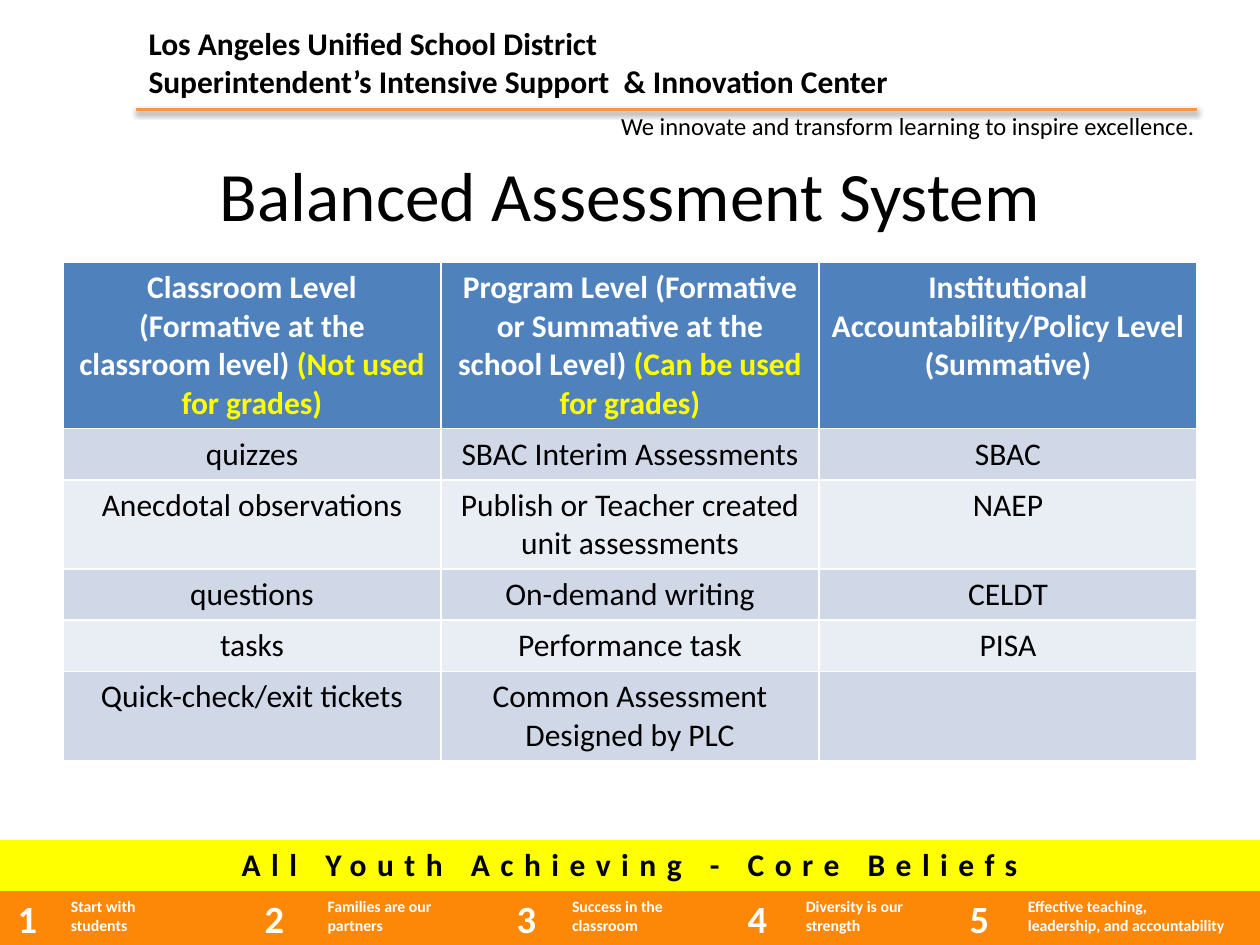
from lxml import etree
from pptx import Presentation
from pptx.dml.color import RGBColor
from pptx.enum import shapes, text
from pptx.oxml import ns
from pptx.util import Pt

FONT = "Calibri"
BLACK = RGBColor(0, 0, 0)
WHITE = RGBColor(255, 255, 255)
YELLOW = RGBColor(255, 255, 0)
ORANGE = RGBColor(0xFD, 0x88, 0x07)
RULE_ORANGE = RGBColor(0xF7, 0x96, 0x46)
BLUE = RGBColor(0x4F, 0x81, 0xBD)
BANDS = (RGBColor(0xD0, 0xD8, 0xE8), RGBColor(0xE9, 0xED, 0xF4))
PLAIN_STYLE = "{2D5ABB26-0587-4C30-8999-92F81FD0307C}"
LEFT, CENTER, RIGHT = (text.PP_ALIGN.LEFT, text.PP_ALIGN.CENTER,
                       text.PP_ALIGN.RIGHT)

HEADINGS = [
    ("Classroom Level (Formative at the classroom level) ",
     "(Not used for grades)"),
    ("Program Level (Formative or Summative at the school Level) ",
     "(Can be used for grades)"),
    ("Institutional Accountability/Policy Level (Summative)",),
]
ASSESSMENTS = [
    ("quizzes", "SBAC Interim Assessments", "SBAC"),
    ("Anecdotal observations",
     "Publish or Teacher created unit assessments", "NAEP"),
    ("questions", "On-demand writing", "CELDT"),
    ("tasks", "Performance task", "PISA"),
    ("Quick-check/exit tickets", "Common Assessment Designed by PLC", ""),
]
ASSESSMENT_HEIGHTS = (95, 29.2, 51, 29.2, 29.2, 51)
BELIEFS = [
    ("1 ", "Start with\nstudents"),
    ("2", "Families are our\npartners"),
    ("3", "Success in the\nclassroom"),
    ("4", "Diversity is our strength"),
    ("5", "Effective teaching,\nleadership, and accountability"),
]
BELIEF_WIDTHS = (33.3, 110.7, 36, 108, 31.7, 100.3, 33.3, 93.7, 33.3, 139.7)


def style_paragraph(para, size, color=BLACK, bold=False, align=LEFT):
    para.alignment = align
    font = para.font
    font.name, font.size, font.bold = FONT, Pt(size), bold
    font.color.rgb = color


def write(frame, words, size, **style):
    frame.text = words
    for para in frame.paragraphs:
        style_paragraph(para, size, **style)


def add_text(page, left, top, width, height, words, size, **style):
    box = page.shapes.add_textbox(Pt(left), Pt(top), Pt(width), Pt(height))
    box.text_frame.word_wrap = True
    write(box.text_frame, words, size, **style)
    return box


def add_rule(page, left, right, y):
    rule = page.shapes.add_connector(
        shapes.MSO_CONNECTOR.STRAIGHT, Pt(left), Pt(y), Pt(right), Pt(y))
    rule.line.color.rgb = RULE_ORANGE
    rule.line.width = Pt(2)
    effects = etree.SubElement(rule._element.spPr, ns.qn("a:effectLst"))
    shadow = etree.SubElement(
        effects, ns.qn("a:outerShdw"), blurRad=str(Pt(3.1)),
        dist=str(Pt(1.6)), dir="5400000", rotWithShape="0")
    tint = etree.SubElement(shadow, ns.qn("a:srgbClr"), val="000000")
    etree.SubElement(tint, ns.qn("a:alpha"), val="38000")


def add_grid(page, left, top, widths, heights):
    grid = page.shapes.add_table(
        len(heights), len(widths), Pt(left), Pt(top),
        Pt(sum(widths)), Pt(sum(heights))).table
    for column, width in zip(grid.columns, widths):
        column.width = Pt(width)
    for row, height in zip(grid.rows, heights):
        row.height = Pt(height)
    return grid


def fill_cell(cell, fill, words, size, **style):
    cell.fill.solid()
    cell.fill.fore_color.rgb = fill
    write(cell.text_frame, words, size, **style)


def add_assessments(page):
    grid = add_grid(page, 36, 150, (216,) * 3, ASSESSMENT_HEIGHTS)
    for column, (heading, *notes) in enumerate(HEADINGS):
        cell = grid.cell(0, column)
        fill_cell(cell, BLUE, heading, 18, color=WHITE, bold=True,
                  align=CENTER)
        for note in notes:
            span = cell.text_frame.paragraphs[0].add_run()
            span.text = note
            span.font.color.rgb = YELLOW
    for row, entries in enumerate(ASSESSMENTS):
        for column, entry in enumerate(entries):
            fill_cell(grid.cell(row + 1, column), BANDS[row % 2], entry, 18,
                      align=CENTER)


def add_beliefs(page):
    grid = add_grid(page, 0, 480, BELIEF_WIDTHS, (29.2, 33.8))
    grid._tbl.tblPr.find(ns.qn("a:tableStyleId")).text = PLAIN_STYLE
    banner = grid.cell(0, 0)
    banner.merge(grid.cell(0, len(BELIEF_WIDTHS) - 1))
    fill_cell(banner, YELLOW, "All Youth Achieving - Core Beliefs", 18,
              bold=True, align=CENTER)
    span = banner.text_frame.paragraphs[0].runs[0]
    span._r.get_or_add_rPr().set("spc", "600")
    for index, (number, belief) in enumerate(BELIEFS):
        fill_cell(grid.cell(1, 2 * index), ORANGE, number, 22, color=WHITE,
                  bold=True, align=LEFT if index else RIGHT)
        fill_cell(grid.cell(1, 2 * index + 1), ORANGE, belief, 9,
                  color=WHITE, bold=True)


def main():
    deck = Presentation()
    deck.slide_width, deck.slide_height = Pt(720), Pt(540)
    page = deck.slides.add_slide(deck.slide_layouts[6])
    add_beliefs(page)
    add_text(page, 77.8, 10, 468, 51,
             "Los Angeles Unified School District\n"
             "Superintendent’s Intensive Support  & Innovation Center",
             18, bold=True)
    add_rule(page, 77.8, 684, 62.5)
    add_text(page, 347.8, 60, 349, 29,
             "We innovate and transform learning to inspire excellence.", 14)
    title = add_text(page, 36, 84, 648, 54, "Balanced Assessment System",
                     39.6, align=CENTER)
    title.text_frame.vertical_anchor = text.MSO_ANCHOR.MIDDLE
    add_assessments(page)
    deck.save("out.pptx")


if __name__ == "__main__":
    main()
